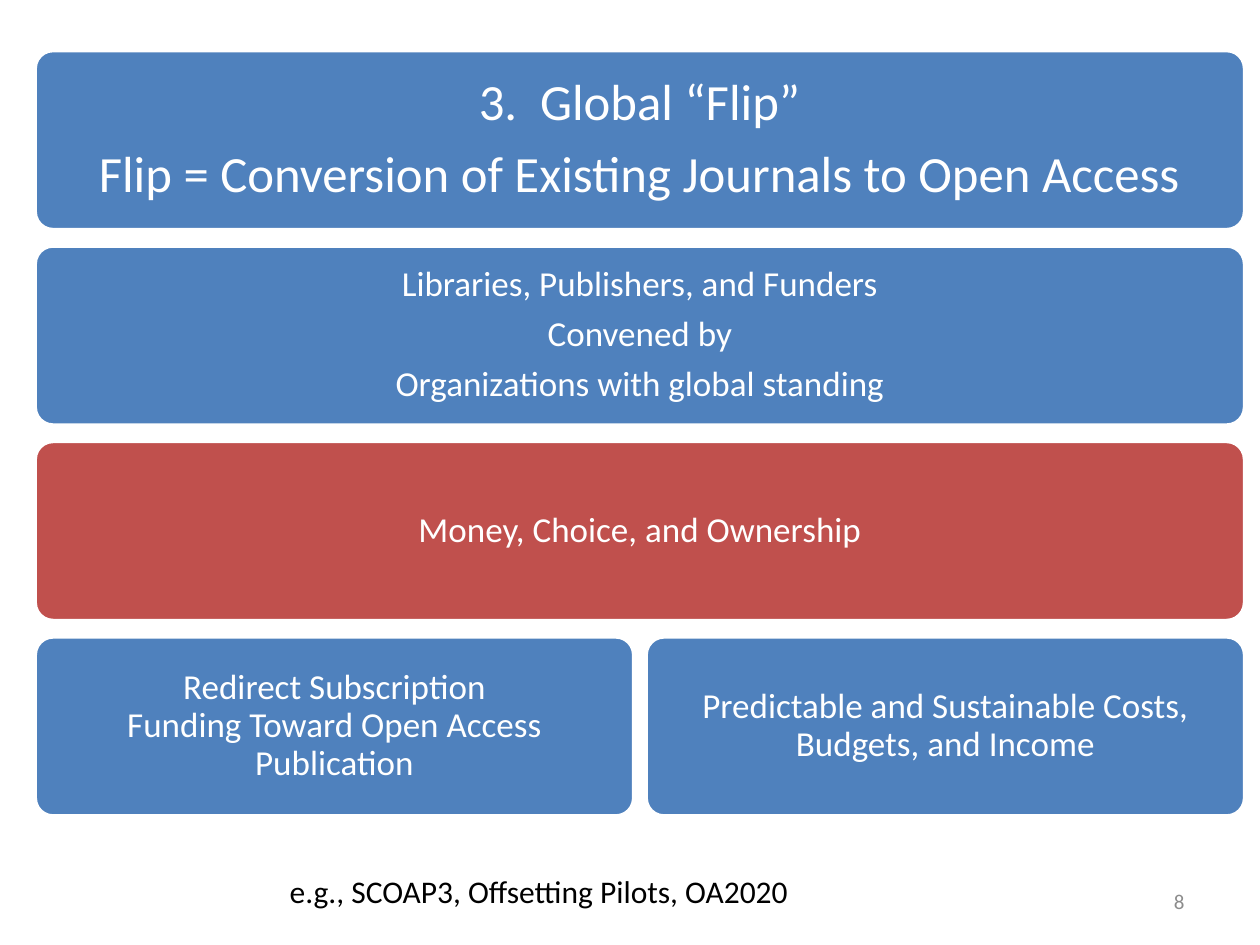
import pptx
import pptx.util
import pptx.dml.color
import pptx.enum.shapes
import pptx.enum.text
from pptx.util import Cm, Pt

COLORS = {"blue": "4F81BD", "red": "C0504D", "white": "FFFFFF",
          "black": "000000", "gray": "8C8C8C"}
FONT = "Calibri"
ALIGN = pptx.enum.text.PP_ALIGN
ANCHOR = pptx.enum.text.MSO_ANCHOR

# Content: each row is (fill, text size, inset in cm, boxes); a box is a list of paragraphs
ROWS = [
    ("blue", 29, 0.31, [["3.  Global “Flip”",
                         "Flip = Conversion of Existing Journals to Open Access"]]),
    ("blue", 20, 0.21, [["Libraries, Publishers, and Funders",
                         "Convened by",
                         "Organizations with global standing"]]),
    ("red", 20, 0.21, [["Money, Choice, and Ownership"]]),
    ("blue", 20, 0.21, [["Redirect Subscription",
                         "Funding Toward Open Access Publication"],
                        ["Predictable and Sustainable Costs, Budgets, and Income"]]),
]
TIGHT = {"Redirect Subscription"}  # no space after this paragraph

# Captions: text, left, top, width, height, size, color, alignment, anchor
CAPTIONS = [
    ("8", 18.21, 17.65, 5.92, 1.02, 12, "gray", ALIGN.RIGHT, ANCHOR.MIDDLE),
    ("e.g., SCOAP3, Offsetting Pilots, OA2020",
     5.59, 17.45, 14.12, 1.02, 18, "black", ALIGN.LEFT, ANCHOR.TOP),
]

# Grid in cm
LEFT, TOP, WIDTH = 0.71, 1.02, 24.38
ROW_HEIGHT, ROW_STEP, COLUMN_GAP = 3.61, 3.94, 0.25


def rgb(name):
    return pptx.dml.color.RGBColor.from_string(COLORS[name])


def add_span(para, text, size, color):
    span = para.add_run()
    span.text = text
    span.font.name = FONT
    span.font.size = Pt(size)
    span.font.color.rgb = rgb(color)


def add_box(page, left, top, width, fill, size, inset, lines):
    box = page.shapes.add_shape(pptx.enum.shapes.MSO_SHAPE.ROUNDED_RECTANGLE,
                                Cm(left), Cm(top), Cm(width), Cm(ROW_HEIGHT))
    box.adjustments[0] = 0.1
    box.shadow.inherit = False
    box.fill.solid()
    box.fill.fore_color.rgb = rgb(fill)
    box.line.color.rgb = rgb("white")
    box.line.width = Pt(2)

    frame = box.text_frame
    frame.word_wrap = True
    frame.vertical_anchor = ANCHOR.MIDDLE
    frame.margin_left = frame.margin_right = Cm(inset)
    frame.margin_top = frame.margin_bottom = Cm(inset)
    for index, line in enumerate(lines):
        para = frame.add_paragraph() if index else frame.paragraphs[0]
        para.alignment = ALIGN.CENTER
        para.line_spacing = 0.9
        para.space_after = Pt(0 if line in TIGHT else round(size * 0.35))
        add_span(para, line, size, "white")


def add_caption(page, text, left, top, width, height, size, color, align, anchor):
    box = page.shapes.add_textbox(Cm(left), Cm(top), Cm(width), Cm(height))
    box.text_frame.word_wrap = True
    box.text_frame.vertical_anchor = anchor
    para = box.text_frame.paragraphs[0]
    para.alignment = align
    add_span(para, text, size, color)


def main():
    deck = pptx.Presentation()
    deck.slide_width, deck.slide_height = Cm(25.4), Cm(19.05)
    page = deck.slides.add_slide(deck.slide_layouts[6])

    # Stacked rows, each split evenly among its boxes
    for row, (fill, size, inset, boxes) in enumerate(ROWS):
        width = (WIDTH - COLUMN_GAP * (len(boxes) - 1)) / len(boxes)
        for column, lines in enumerate(boxes):
            add_box(page, LEFT + column * (width + COLUMN_GAP),
                    TOP + row * ROW_STEP, width, fill, size, inset, lines)

    # Examples and page number
    for caption in CAPTIONS:
        add_caption(page, *caption)

    deck.save("out.pptx")


if __name__ == "__main__":
    main()
